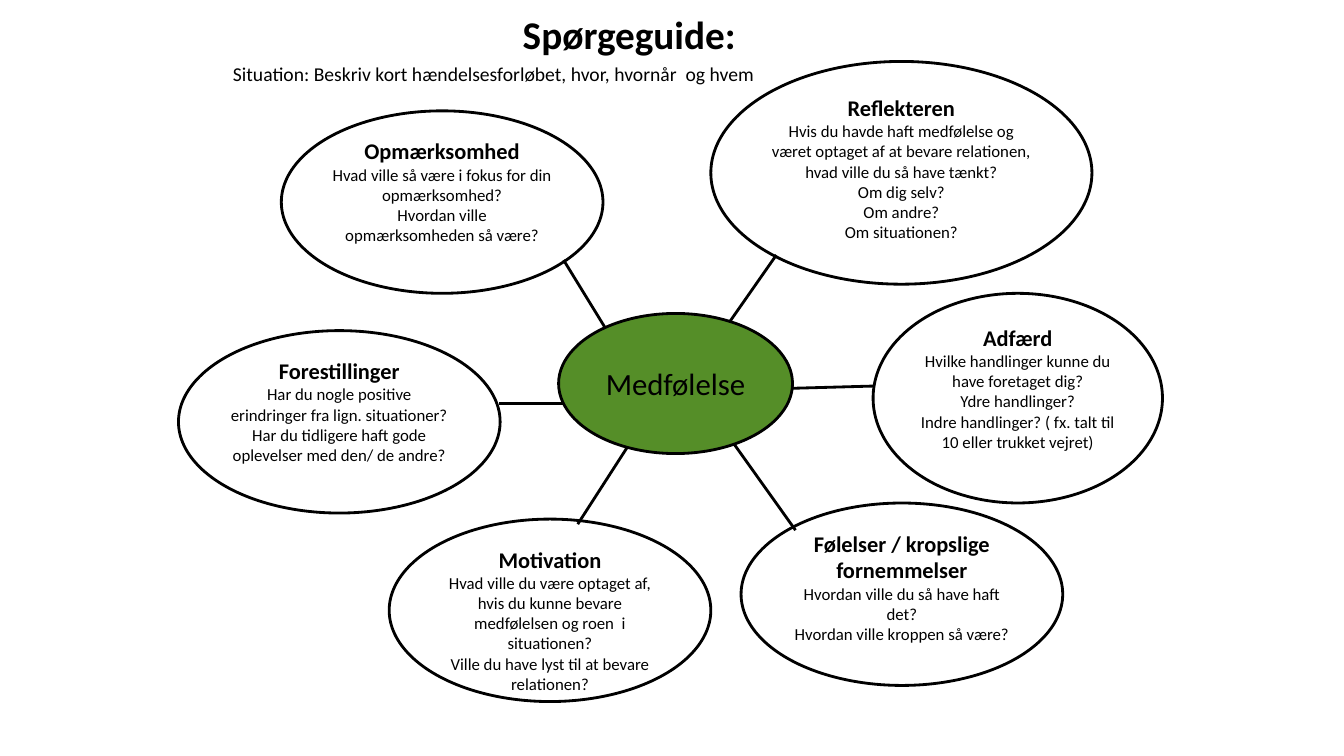
from dataclasses import dataclass

from lxml import etree
from pptx import Presentation
from pptx.dml.color import RGBColor
from pptx.enum.shapes import MSO_CONNECTOR, MSO_SHAPE
from pptx.enum.text import MSO_ANCHOR, MSO_AUTO_SIZE, PP_ALIGN
from pptx.oxml.ns import qn
from pptx.util import Inches, Pt

OVAL = MSO_SHAPE.OVAL
STRAIGHT = MSO_CONNECTOR.STRAIGHT
TOP, MIDDLE = MSO_ANCHOR.TOP, MSO_ANCHOR.MIDDLE
LEFT, CENTER = PP_ALIGN.LEFT, PP_ALIGN.CENTER
NO_AUTOFIT = MSO_AUTO_SIZE.NONE
TITLE_ONLY = 5


@dataclass(frozen=True)
class Theme:
    font: str = "Calibri"
    ink: RGBColor = RGBColor(0x00, 0x00, 0x00)
    hub: RGBColor = RGBColor(0x55, 0x8E, 0x28)
    title: int = 28
    hub_label: int = 22
    heading: int = 16
    situation: int = 14
    body: int = 12
    line: int = 2
    inset: float = 0.04


THEME = Theme()

TITLE = "Spørgeguide:"
TITLE_BOX = (4.59, 0.05, 3.3, 0.88)
SITUATION = "Situation: Beskriv kort hændelsesforløbet, hvor, hvornår  og hvem"
SITUATION_BOX = (2.27, 0.61, 9.57, 0.38)
HUB = "Medfølelse"
HUB_BOX = (5.54, 3.11, 2.32, 1.39)

BUBBLE_SIZE = (3.19, 1.81)
BUBBLES = [
    ((2.79, 1.1, *BUBBLE_SIZE), "Opmærksomhed", [
        "Hvad ville så være i fokus for din opmærksomhed?",
        "Hvordan ville opmærksomheden så være?"]),
    ((3.86, 5.15, *BUBBLE_SIZE), "Motivation", [
        "Hvad ville du være optaget af, hvis du kunne bevare medfølelsen og roen  i situationen?",
        "Ville du have lyst til at bevare relationen?"]),
    ((7.35, 4.99, *BUBBLE_SIZE), "Følelser / kropslige fornemmelser", [
        "Hvordan ville du så have haft det?",
        "Hvordan ville kroppen så være?"]),
    ((1.77, 3.28, *BUBBLE_SIZE), "Forestillinger", [
        "Har du nogle positive erindringer fra lign. situationer?",
        "Har du tidligere haft gode oplevelser med den/ de andre?"]),
    ((8.66, 2.91, 2.87, 2.08), "Adfærd", [
        "Hvilke handlinger kunne du have foretaget dig?",
        "Ydre handlinger?",
        "Indre handlinger? ( fx. talt til 10 eller trukket vejret)"]),
    ((7.05, 0.61, 3.78, 2.21), "Reflekteren", [
        "Hvis du havde haft medfølelse og været optaget af at bevare relationen, "
        "hvad ville du så have tænkt?",
        "Om dig selv?",
        "Om andre?",
        "Om situationen?"]),
]

SPOKES = [
    ((7.58, 3.86), (8.66, 3.83)),
    ((6.22, 4.44), (5.73, 5.2)),
    ((7.17, 4.25), (7.89, 5.26)),
    ((5.59, 2.58), (6.13, 3.46)),
    ((4.95, 4), (5.73, 4)),
    ((7.7, 2.53), (7.05, 3.46)),
]


def apply_format(target, values):
    for name, value in values.items():
        setattr(target, name, value)


def write_text(frame, lines, anchor=TOP, alignment=CENTER):
    apply_format(frame, {
        "word_wrap": True, "auto_size": NO_AUTOFIT, "vertical_anchor": anchor,
        "margin_left": 0, "margin_top": 0, "margin_bottom": 0,
        "margin_right": Inches(THEME.inset),
    })
    for index, (text, size, bold) in enumerate(lines):
        paragraph = frame.add_paragraph() if index else frame.paragraphs[0]
        paragraph.alignment = alignment
        properties = paragraph._p.get_or_add_pPr()
        properties.set("marL", str(Inches(THEME.inset)))
        properties.set("indent", "0")
        run = paragraph.add_run()
        run.text = text
        style_font(run.font, size, bold)


def style_font(font, size, bold):
    apply_format(font, {"name": THEME.font, "size": Pt(size), "bold": bold})
    font.color.rgb = THEME.ink


def style_line(line):
    line.color.rgb = THEME.ink
    line.width = Pt(THEME.line)


def add_title(slide, box):
    title = slide.shapes.title
    left, top, width, height = map(Inches, box)
    apply_format(title, {"left": left, "top": top, "width": width, "height": height})
    frame = title.text_frame
    apply_format(frame, {"word_wrap": True, "auto_size": NO_AUTOFIT, "vertical_anchor": TOP})
    paragraph = frame.paragraphs[0]
    paragraph.alignment = CENTER
    run = paragraph.add_run()
    run.text = TITLE
    style_font(run.font, THEME.title, True)


def add_situation(slide, box):
    text_box = slide.shapes.add_textbox(*map(Inches, box))
    write_text(text_box.text_frame, [(SITUATION, THEME.situation, False)], alignment=LEFT)


def add_oval(slide, box, lines, fill=None, anchor=TOP):
    oval = slide.shapes.add_shape(OVAL, *map(Inches, box))
    oval.shadow.inherit = False
    if fill is None:
        oval.fill.background()
    else:
        oval.fill.solid()
        oval.fill.fore_color.rgb = fill
    style_line(oval.line)
    write_text(oval.text_frame, lines, anchor)


def add_bubble(slide, box, heading, questions):
    lines = [(heading, THEME.heading, True)]
    lines += [(question, THEME.body, False) for question in questions]
    add_oval(slide, box, lines)


def add_spoke(slide, start, end):
    spoke = slide.shapes.add_connector(STRAIGHT, *map(Inches, start + end))
    style_line(spoke.line)
    etree.SubElement(spoke._element.spPr, qn("a:effectLst"))


def build_guide(presentation):
    slide = presentation.slides.add_slide(presentation.slide_layouts[TITLE_ONLY])
    add_title(slide, TITLE_BOX)
    for box, heading, questions in BUBBLES:
        add_bubble(slide, box, heading, questions)
    for start, end in SPOKES:
        add_spoke(slide, start, end)
    add_situation(slide, SITUATION_BOX)
    add_oval(slide, HUB_BOX, [(HUB, THEME.hub_label, False)], THEME.hub, MIDDLE)


def main():
    presentation = Presentation()
    presentation.slide_width = Inches(13.33)
    presentation.slide_height = Inches(7.5)
    build_guide(presentation)
    presentation.save("out.pptx")


if __name__ == "__main__":
    main()
